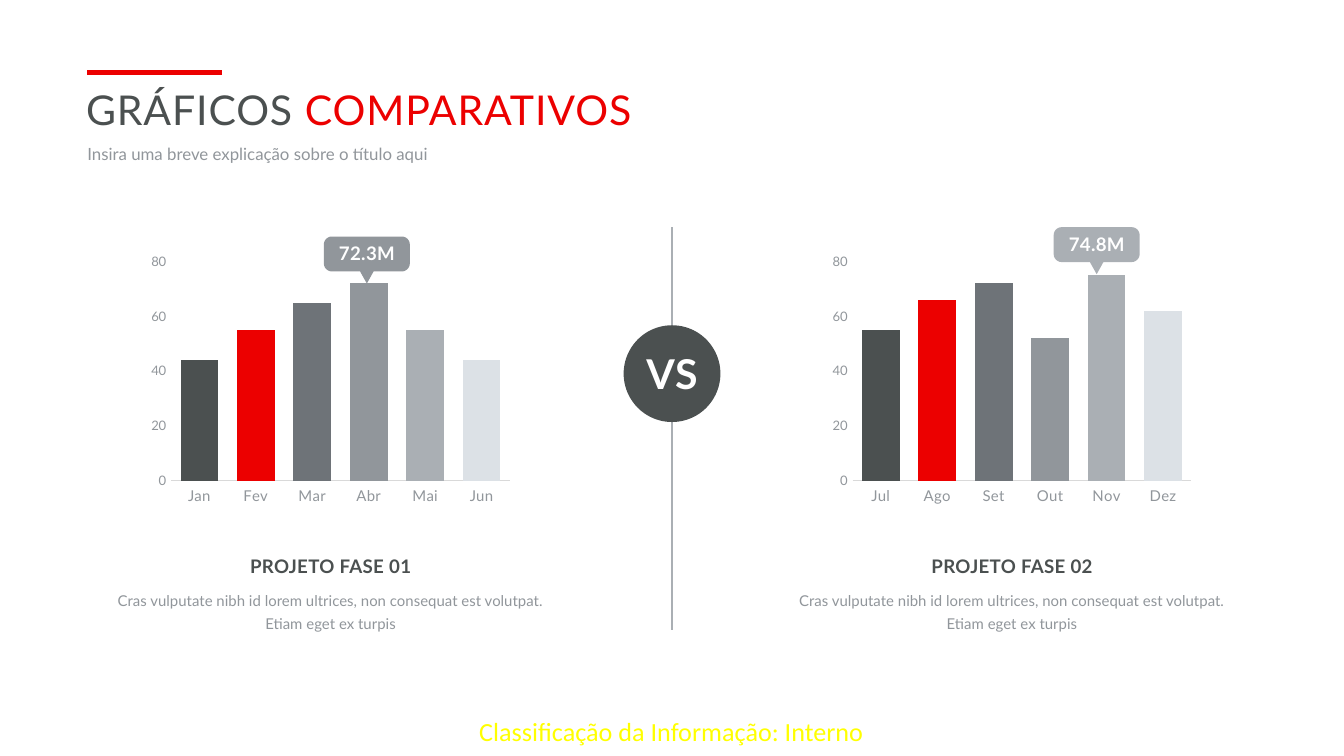
import math
from lxml import etree
from pptx import Presentation
from pptx.chart.data import CategoryChartData
from pptx.dml.color import RGBColor
from pptx.enum.chart import XL_CHART_TYPE, XL_TICK_MARK
from pptx.enum.shapes import MSO_CONNECTOR, MSO_SHAPE
from pptx.enum.text import MSO_ANCHOR, MSO_AUTO_SIZE, PP_ALIGN
from pptx.oxml import parse_xml
from pptx.oxml.ns import nsdecls, qn
from pptx.util import Inches, Pt

COLUMN = XL_CHART_TYPE.COLUMN_CLUSTERED
NO_TICK = XL_TICK_MARK.NONE
STRAIGHT = MSO_CONNECTOR.STRAIGHT
OVAL = MSO_SHAPE.OVAL
TOP, MIDDLE = MSO_ANCHOR.TOP, MSO_ANCHOR.MIDDLE
NO_FIT = MSO_AUTO_SIZE.NONE
LEFT, CENTER = PP_ALIGN.LEFT, PP_ALIGN.CENTER

HEX = {"dark": "4B5050", "red": "EC0000", "slate": "6E7378", "gray": "91969B",
       "silver": "AAAFB4", "pale": "DCE1E6", "axis": "D9D9D9",
       "white": "FFFFFF", "yellow": "FFFF00"}
RGB = {name: RGBColor.from_string(code) for name, code in HEX.items()}
BARS = ["dark", "red", "slate", "gray", "silver", "pale"]

prs = Presentation()
prs.slide_width, prs.slide_height = Inches(10), Inches(10 * 9 / 16)
slide = prs.slides.add_slide(prs.slide_layouts[2])
shapes = slide.shapes


def write(box, at, parts, size, align=CENTER, bold=False, track=0, font="Lato"):
    """Place a box and fill one paragraph with (text, colour) parts."""
    box.left, box.top, box.width, box.height = [Inches(n) for n in at]
    frame = box.text_frame
    frame.margin_left = frame.margin_right = frame.margin_top = frame.margin_bottom = 0
    frame.word_wrap = True
    frame.auto_size = NO_FIT
    frame.vertical_anchor = TOP
    para = frame.paragraphs[0]
    para.alignment = align
    para.space_before = Pt(0)
    for text, color in parts:
        run = para.add_run()
        run.text = text
        run.font.name, run.font.size, run.font.bold = font, Pt(size), bold
        run.font.color.rgb = RGB[color]
        if track:
            run.font._element.set("spc", str(int(track * 100)))
    return frame


def rule(x1, y1, x2, y2, color, width):
    line = shapes.add_connector(STRAIGHT, *[Inches(n) for n in (x1, y1, x2, y2)])
    line.line.color.rgb = RGB[color]
    line.line.width = Pt(width)
    etree.SubElement(line._element.spPr, qn("a:effectLst"))


# Heading
rule(0.65, 0.54, 1.65, 0.54, "red", 2.25)
write(shapes.title, (0.64, 0.63, 8.7, 0.42),
      [("GRÁFICOS ", "dark"), ("COMPARATIVOS", "red")], 22, LEFT, track=0.5)
intro = write(slide.placeholders[1], (0.65, 1.05, 8.7, 0.15),
              [("Insira uma breve explicação sobre o título aqui", "gray")], 9, LEFT)
intro.paragraphs[0].line_spacing = Pt(12)

# Panels: left edge, months, values, callout (left, top, label, colour), heading
panels = [
    (0.85, ["Jan", "Fev", "Mar", "Abr", "Mai", "Jun"], [44, 55, 65, 72, 55, 44],
     (2.41, 1.76, "72.3M", "gray"), "PROJETO FASE 01"),
    (5.92, ["Jul", "Ago", "Set", "Out", "Nov", "Dez"], [55, 66, 72, 52, 75, 62],
     (7.84, 1.69, "74.8M", "silver"), "PROJETO FASE 02"),
]
NOTE = ("Cras vulputate nibh id lorem ultrices, non consequat est volutpat. "
        "Etiam eget ex turpis")
PLOT = {"x": 0.07, "y": 0.05, "w": 0.91, "h": 0.84}

for left, months, values, (cx, cy, label, tint), head in panels:
    data = CategoryChartData()
    data.categories = months
    data.add_series("Series 1", values)
    chart = shapes.add_chart(COLUMN, Inches(left + 0.23), Inches(1.85),
                             Inches(2.77), Inches(1.94), data).chart
    chart.has_title = chart.has_legend = False
    chart.font.name, chart.font.size = "Lato", Pt(8)
    chart.font.color.rgb = RGB["gray"]
    for axis, size in ((chart.category_axis, 8), (chart.value_axis, 7)):
        axis.has_major_gridlines = False
        axis.major_tick_mark = axis.minor_tick_mark = NO_TICK
        font = axis.tick_labels.font
        font.name, font.size = "Lato", Pt(size)
        font.color.rgb = RGB["gray"]
    chart.category_axis.format.line.color.rgb = RGB["axis"]
    chart.category_axis.format.line.width = Pt(0.75)
    scale = chart.value_axis
    scale.format.line.fill.background()
    scale.minimum_scale, scale.maximum_scale, scale.major_unit = 0, 80, 20

    plot = chart.plots[0]
    plot.gap_width = 50
    plot.vary_by_categories = False
    bars = plot.series[0]
    bars.format.fill.solid()
    bars.format.fill.fore_color.rgb = RGB[BARS[0]]
    for i, color in enumerate(BARS[1:], 1):
        fill = bars.points[i].format.fill
        fill.solid()
        fill.fore_color.rgb = RGB[color]

    area = chart._chartSpace.chart.plotArea
    for old in area.findall(qn("c:layout")):
        area.remove(old)
    sizes = "".join(f'<c:{k} val="{v}"/>' for k, v in PLOT.items())
    area.insert(0, parse_xml(
        f'<c:layout {nsdecls("c")}><c:manualLayout><c:layoutTarget val="inner"/>'
        f'<c:xMode val="edge"/><c:yMode val="edge"/>{sizes}'
        '</c:manualLayout></c:layout>'))

    # Rounded callout with a centred pointer
    wide, tall, tip, r = 0.64, 0.26, 0.35, 0.06
    points = []
    corners = [(r, r, 180), (wide - r, r, 270),
               (wide - r, tall - r, 0), (r, tall - r, 90)]
    for x, y, start in corners:
        if start == 90:
            points += [(wide / 2 + 0.05, tall), (wide / 2, tip), (wide / 2 - 0.05, tall)]
        for step in range(0, 91, 15):
            turn = math.radians(start + step)
            points.append((x + r * math.cos(turn), y + r * math.sin(turn)))
    points = [(Inches(cx + x), Inches(cy + y)) for x, y in points]
    pen = shapes.build_freeform(*points[0])
    pen.add_line_segments(points[1:], close=True)
    flag = pen.convert_to_shape()
    flag.shadow.inherit = False
    flag.fill.solid()
    flag.fill.fore_color.rgb = RGB[tint]
    flag.line.fill.background()
    write(shapes.add_textbox(0, 0, 0, 0), (cx + 0.05, cy + 0.04, 0.54, 0.17),
          [(label, "white")], 10, bold=True, track=0.2)

    note = write(shapes.add_textbox(0, 0, 0, 0), (left, 4.36, 3.22, 0.33),
                 [(NOTE, "gray")], 8)
    note.paragraphs[0].line_spacing = 1.3
    write(shapes.add_textbox(0, 0, 0, 0), (left, 4.13, 3.22, 0.17),
          [(head, "dark")], 10, bold=True, track=0.2)

# Divider
rule(5, 1.69, 5, 4.69, "silver", 0.75)
disc = shapes.add_shape(OVAL, Inches(4.64), Inches(2.42), Inches(0.72), Inches(0.72))
disc.shadow.inherit = False
disc.fill.solid()
disc.fill.fore_color.rgb = RGB["dark"]
disc.line.fill.background()
write(shapes.add_textbox(0, 0, 0, 0), (4.73, 2.59, 0.54, 0.38),
      [("VS", "white")], 22, bold=True, track=0.5)

# Footer
foot = write(shapes.add_textbox(0, 0, 0, 0), (3.34, 5.26, 3.31, 0.36),
             [("Classificação da Informação: Interno", "yellow")], 14, font="Calibri")
foot.vertical_anchor = MIDDLE

prs.save("out.pptx")
